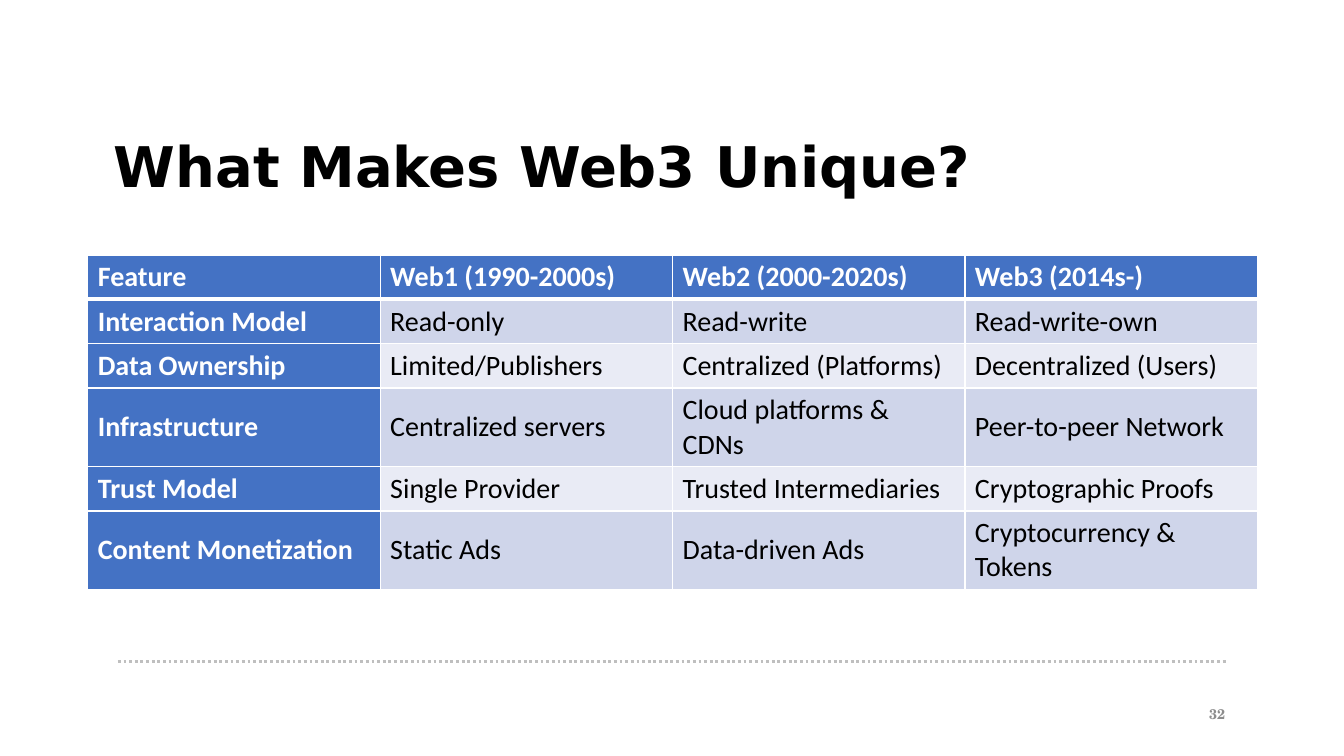
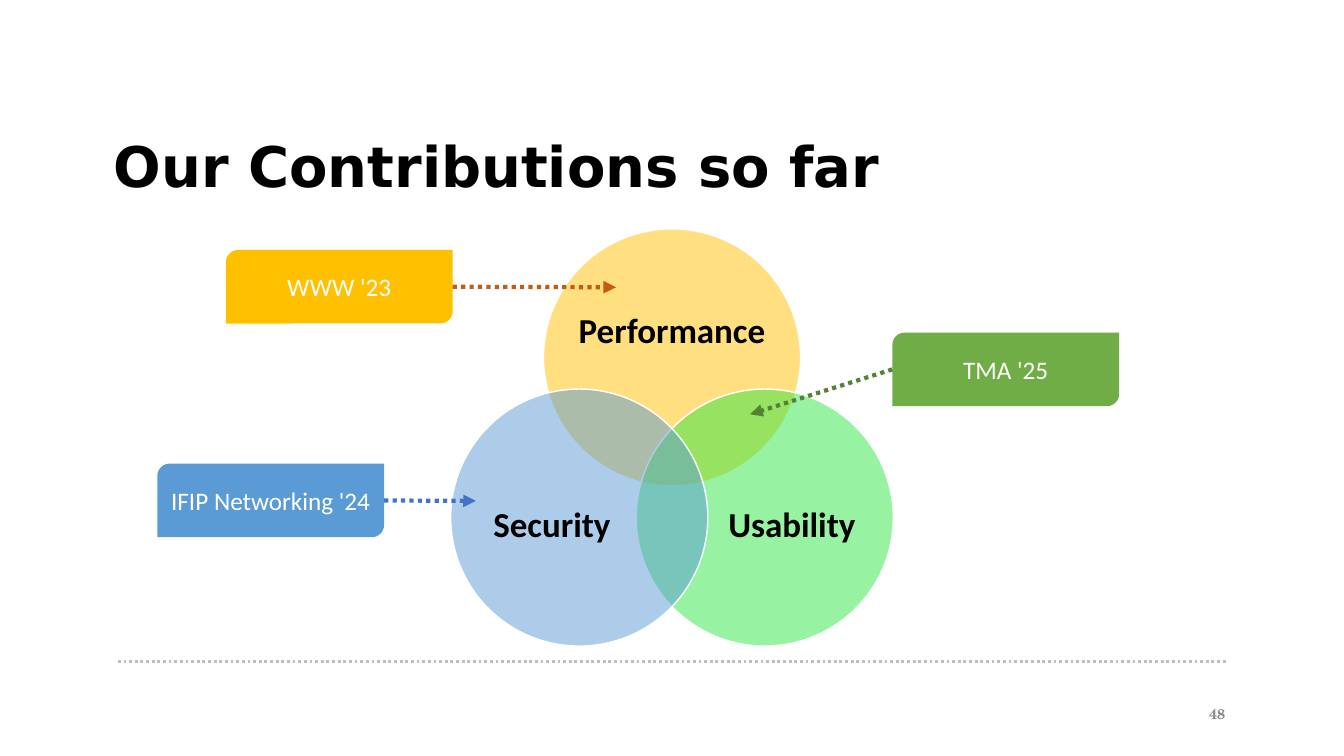
from pptx import Presentation
from pptx.dml.color import RGBColor
from pptx.enum.dml import MSO_LINE
from pptx.enum.shapes import MSO_CONNECTOR, MSO_SHAPE
from pptx.enum.text import MSO_ANCHOR, MSO_AUTO_SIZE, PP_ALIGN
from pptx.oxml.ns import qn
from pptx.util import Inches, Pt
from lxml import etree

LEFT, CENTER, RIGHT = PP_ALIGN.LEFT, PP_ALIGN.CENTER, PP_ALIGN.RIGHT
TOP, MIDDLE = MSO_ANCHOR.TOP, MSO_ANCHOR.MIDDLE
DOTTED = MSO_LINE.ROUND_DOT
OVAL, CALLOUT = MSO_SHAPE.OVAL, MSO_SHAPE.ROUND_2_DIAG_RECTANGLE

WHITE = RGBColor(0xFF, 0xFF, 0xFF)
BLACK = RGBColor(0, 0, 0)
RULE_GRAY = RGBColor(0xBF, 0xBF, 0xBF)
NUMBER_GRAY = RGBColor(0x8C, 0x8C, 0x8C)
BLUE = RGBColor(0x44, 0x72, 0xC4)
BANDS = RGBColor(0xE9, 0xEB, 0xF5), RGBColor(0xCF, 0xD5, 0xEA)
GOLD = RGBColor(0xFF, 0xC0, 0x00)
LIME = RGBColor(0x30, 0xE8, 0x45)
SKY = RGBColor(0x5B, 0x9B, 0xD5)
GREEN = RGBColor(0x70, 0xAD, 0x47)
RUST = RGBColor(0xC5, 0x5A, 0x11)
DARK_GREEN = RGBColor(0x54, 0x82, 0x35)

TITLE_FONT = {"name": "DejaVu Sans", "size": Pt(40), "bold": True}
NUMBER_FONT = {"name": "TeX Gyre Schola", "size": Pt(10), "bold": True}
HEAD_FONT = {"name": "Calibri", "size": Pt(20), "bold": True}
CELL_FONT = {**HEAD_FONT, "bold": False}
CIRCLE_FONT = {"name": "Calibri", "size": Pt(25), "bold": True}
CALLOUT_FONT = {"name": "Calibri", "size": Pt(18), "bold": False}

SLIDE_WIDTH, SLIDE_HEIGHT = 13.33, 7.5
TITLE_BOX = 1.13, 1.49, 11, 1.16
NUMBER_BOX = 9.25, 6.88, 3, 0.4
RULE = (1.17, 6.56), (12.17, 6.56)

FEATURES = [
    ("Feature", "Web1 (1990-2000s)", "Web2 (2000-2020s)", "Web3 (2014s-)"),
    ("Interaction Model", "Read-only", "Read-write", "Read-write-own"),
    ("Data Ownership", "Limited/Publishers", "Centralized (Platforms)", "Decentralized (Users)"),
    ("Infrastructure", "Centralized servers", "Cloud platforms & CDNs", "Peer-to-peer Network"),
    ("Trust Model", "Single Provider", "Trusted Intermediaries", "Cryptographic Proofs"),
    ("Content Monetization", "Static Ads", "Data-driven Ads", "Cryptocurrency & Tokens"),
]
TABLE_LEFT, TABLE_TOP, COLUMN_WIDTH = 0.87, 2.53, 2.9
ROW_HEIGHTS = [0.44, 0.44, 0.44, 0.78, 0.44, 0.78]

DIAMETER = 2.55
VENN_LEFT, VENN_TOP = 4.47, 2.27
VENN_STEP_X, VENN_STEP_Y = 0.92, 1.59
GOALS = [
    ("Performance", GOLD, 1, 0, (0.34, 0.45, 1.87, 1.15)),
    ("Usability", LIME, 2, 1, (0.78, 0.66, 1.53, 1.4)),
    ("Security", SKY, 0, 1, (0.24, 0.66, 1.53, 1.4)),
]

CALLOUT_WIDTH, CALLOUT_HEIGHT = 2.25, 0.73
PAPERS = [
    ("WWW '23", GOLD, RUST, (2.24, 2.48), 1, (6.11, 2.85)),
    ("IFIP Networking '24", SKY, BLUE, (1.56, 4.6), 1, (4.72, 4.97)),
    ("TMA '25", GREEN, DARK_GREEN, (8.85, 3.3), 0, (7.44, 4.11)),
]


def inches(values):
    return [Inches(value) for value in values]


def apply(target, values):
    for key, value in values.items():
        setattr(target, key, value)


def write(frame, text, font, color, align=LEFT, anchor=MIDDLE, spacing=None, inset=None):
    apply(frame, {"text": text, "word_wrap": True, "vertical_anchor": anchor})
    if inset is not None:
        sides = "margin_left", "margin_top", "margin_right", "margin_bottom"
        apply(frame, dict.fromkeys(sides, Inches(inset)))
    paragraph = frame.paragraphs[0]
    apply(paragraph, {"alignment": align, "line_spacing": spacing})
    run_font = paragraph.runs[0].font
    apply(run_font, font)
    run_font.color.rgb = color


def add_text(slide, box, *args, **options):
    write(slide.shapes.add_textbox(*inches(box)).text_frame, *args, **options)


def add_filled(slide, preset, box, fill):
    shape = slide.shapes.add_shape(preset, *inches(box))
    shape.shadow.inherit = False
    shape.fill.solid()
    shape.fill.fore_color.rgb = fill
    return shape


def add_dotted(slide, start, end, color, width, arrow=False):
    connector = slide.shapes.add_connector(MSO_CONNECTOR.STRAIGHT, *inches(start + end))
    line = connector.line
    line.color.rgb = color
    apply(line, {"width": Pt(width), "dash_style": DOTTED})
    properties = connector._element.spPr
    if arrow:
        etree.SubElement(properties.find(qn("a:ln")), qn("a:tailEnd"), type="triangle")
    etree.SubElement(properties, qn("a:effectLst"))


def add_page(deck, title, number):
    slide = deck.slides.add_slide(deck.slide_layouts[5])
    heading = slide.shapes.title
    apply(heading, dict(zip(("left", "top", "width", "height"), inches(TITLE_BOX))))
    write(heading.text_frame, title, TITLE_FONT, BLACK, anchor=TOP, spacing=0.7, inset=0)
    heading.text_frame.auto_size = MSO_AUTO_SIZE.NONE
    add_dotted(slide, *RULE, RULE_GRAY, 2)
    add_text(slide, NUMBER_BOX, number, NUMBER_FONT, NUMBER_GRAY, align=RIGHT)
    return slide


def border_cell(cell, row):
    widths = {"lnL": 1, "lnR": 1, "lnT": 3 if row == 1 else 1, "lnB": 3 if row == 0 else 1}
    properties = cell._tc.get_or_add_tcPr()
    for side, width in widths.items():
        edge = etree.SubElement(properties, qn("a:" + side), w=str(Pt(width)))
        fill = etree.SubElement(edge, qn("a:solidFill"))
        etree.SubElement(fill, qn("a:srgbClr"), val=str(WHITE))


def add_features(slide):
    columns = len(FEATURES[0])
    box = TABLE_LEFT, TABLE_TOP, columns * COLUMN_WIDTH, sum(ROW_HEIGHTS)
    table = slide.shapes.add_table(len(FEATURES), columns, *inches(box)).table
    apply(table, {"first_col": True})
    for column in table.columns:
        column.width = Inches(COLUMN_WIDTH)
    for r, texts in enumerate(FEATURES):
        table.rows[r].height = Inches(ROW_HEIGHTS[r])
        for c, text in enumerate(texts):
            heading = r == 0 or c == 0
            cell = table.cell(r, c)
            border_cell(cell, r)
            cell.fill.solid()
            cell.fill.fore_color.rgb = BLUE if heading else BANDS[r % 2]
            write(cell.text_frame, text, HEAD_FONT if heading else CELL_FONT,
                  WHITE if heading else BLACK)
            cell.vertical_anchor = MIDDLE


def add_goals(slide):
    for label, color, column, row, (dx, dy, width, height) in GOALS:
        left = VENN_LEFT + column * VENN_STEP_X
        top = VENN_TOP + row * VENN_STEP_Y
        circle = add_filled(slide, OVAL, (left, top, DIAMETER, DIAMETER), color)
        circle.line.color.rgb = WHITE
        circle.line.width = Pt(1)
        tint = circle._element.spPr.find(qn("a:solidFill"))[0]
        etree.SubElement(tint, qn("a:alpha"), val="50000")
        add_text(slide, (left + dx, top + dy, width, height), label, CIRCLE_FONT, BLACK,
                 align=CENTER, spacing=0.9, inset=0)


def add_papers(slide):
    for venue, fill, arrow_color, (left, top), side, target in PAPERS:
        box = left, top, CALLOUT_WIDTH, CALLOUT_HEIGHT
        callout = add_filled(slide, CALLOUT, box, fill)
        callout.line.fill.background()
        write(callout.text_frame, venue, CALLOUT_FONT, WHITE, align=CENTER)
        start = left + side * CALLOUT_WIDTH, top + CALLOUT_HEIGHT / 2
        add_dotted(slide, start, target, arrow_color, 3, arrow=True)


def main():
    deck = Presentation()
    deck.slide_width, deck.slide_height = inches((SLIDE_WIDTH, SLIDE_HEIGHT))
    add_features(add_page(deck, "What Makes Web3 Unique?", "32"))
    contributions = add_page(deck, "Our Contributions so far", "48")
    add_goals(contributions)
    add_papers(contributions)
    deck.save("out.pptx")


if __name__ == "__main__":
    main()
